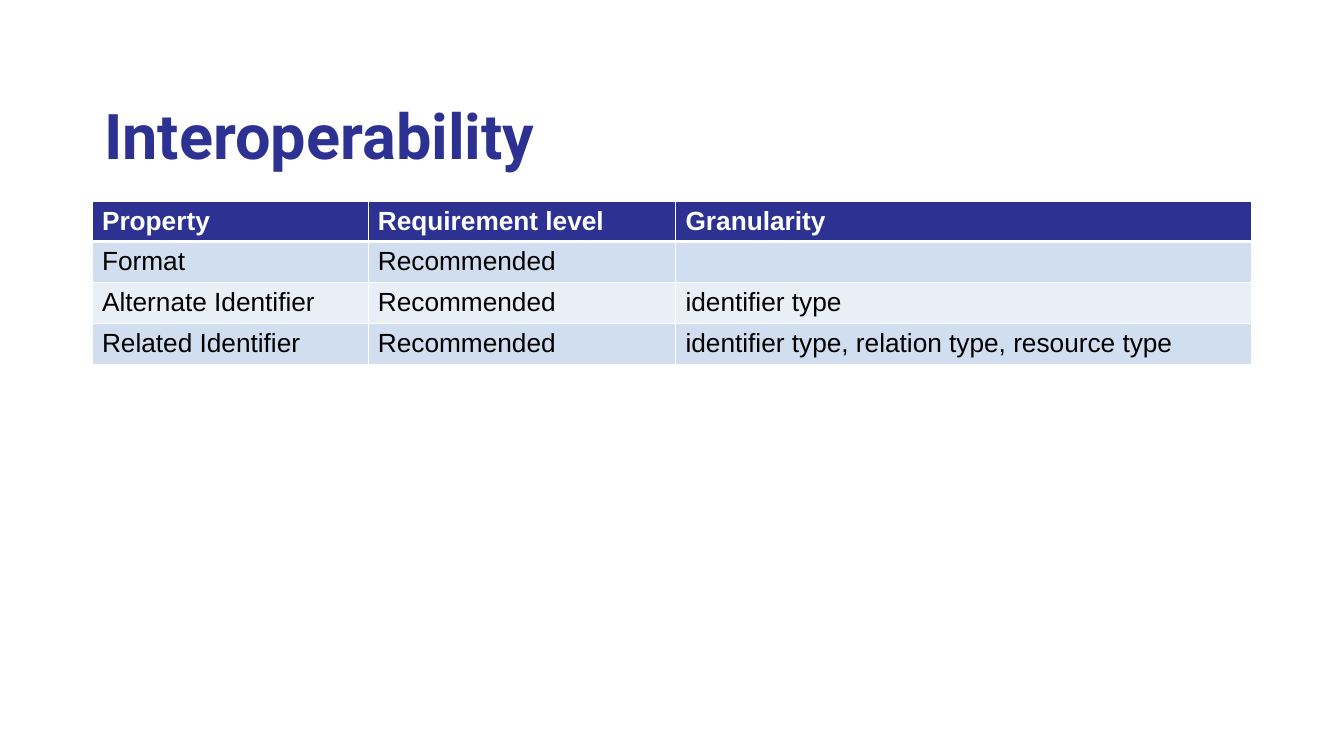
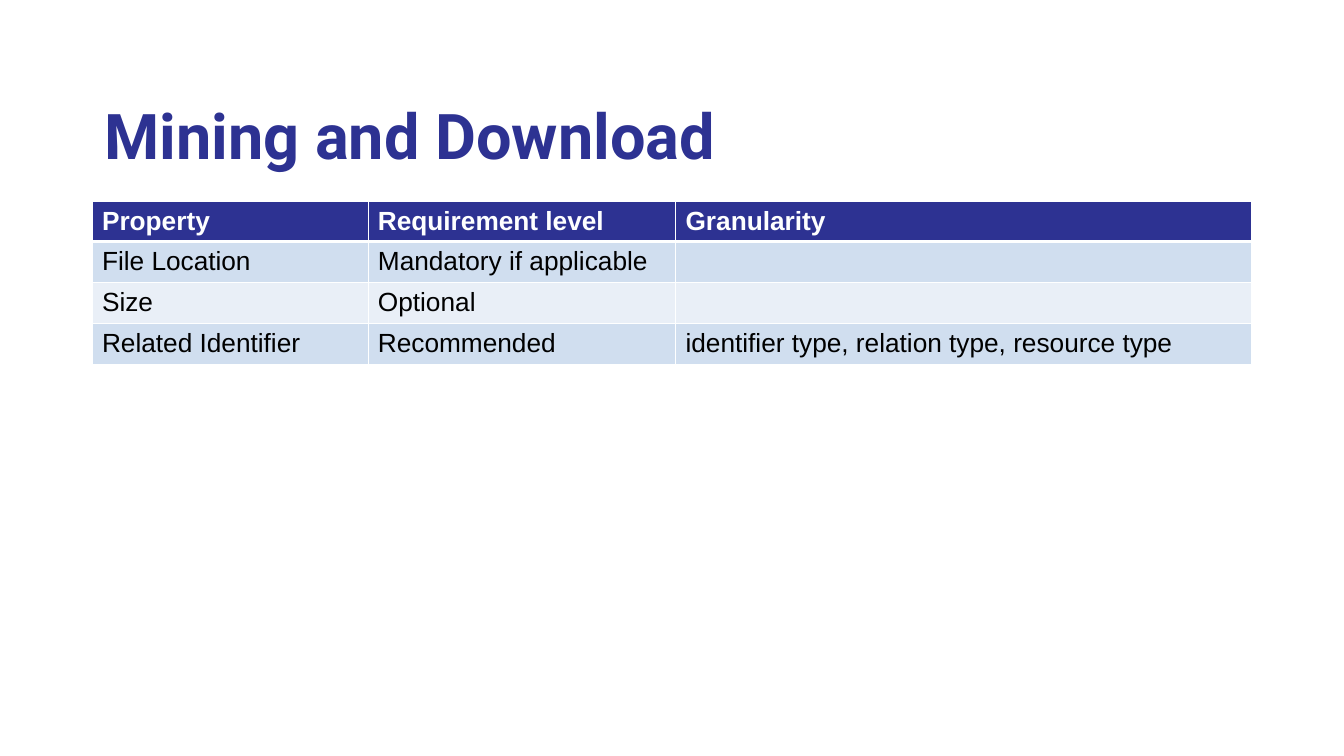
"""Build two slides of metadata property tables, Interoperability and Mining and Download."""
from lxml import etree
from pptx import Presentation
from pptx.dml.color import RGBColor
from pptx.enum.text import MSO_ANCHOR, MSO_AUTO_SIZE, PP_ALIGN
from pptx.oxml.ns import qn
from pptx.util import Inches, Pt

LEFT = PP_ALIGN.LEFT
MIDDLE = MSO_ANCHOR.MIDDLE
NO_AUTOFIT = MSO_AUTO_SIZE.NONE

INDIGO = RGBColor(0x2D, 0x32, 0x92)
WHITE = RGBColor(0xFE, 0xFF, 0xFF)
BLACK = RGBColor(0x00, 0x00, 0x00)
BAND_DARK = RGBColor(0xD0, 0xDE, 0xEF)
BAND_LIGHT = RGBColor(0xE9, 0xEF, 0xF7)

TITLE_ONLY = 5
COLUMN_WIDTHS = [3.65, 4.07, 7.62]
ROW_HEIGHT = 0.54
HEADER = ("Property", "Requirement level", "Granularity")
RELATED = ("Related Identifier", "Recommended", "identifier type, relation type, resource type")
SECTIONS = [
    ("Interoperability", [
        ("Format", "Recommended", ""),
        ("Alternate Identifier", "Recommended", "identifier type"),
        RELATED,
    ]),
    ("Mining and Download", [
        ("File Location", "Mandatory if applicable", ""),
        ("Size", "Optional", ""),
        RELATED,
    ]),
]


def style_font(paragraph, name, size, color, bold):
    font = paragraph.font
    font.name, font.size, font.bold = name, Pt(size), bold
    font.color.rgb = color


def set_borders(cell, top, bottom):
    properties = cell._tc.get_or_add_tcPr()
    sides = [("a:lnL", 1), ("a:lnR", 1), ("a:lnT", top), ("a:lnB", bottom)]
    for position, (side, width) in enumerate(sides):
        line = etree.Element(qn(side), w=str(Pt(width)))
        fill = etree.SubElement(line, qn("a:solidFill"))
        etree.SubElement(fill, qn("a:srgbClr"), val=str(WHITE))
        properties.insert(position, line)


prs = Presentation()
prs.slide_width, prs.slide_height = Inches(17.78), Inches(10)

for heading, properties in SECTIONS:
    slide = prs.slides.add_slide(prs.slide_layouts[TITLE_ONLY])
    title = slide.shapes.title
    title.left, title.top = Inches(1.38), Inches(0.66)
    title.width, title.height = Inches(26.31), Inches(2.23)
    title_frame = title.text_frame
    title_frame.text = heading
    title_frame.auto_size = NO_AUTOFIT
    title_frame.vertical_anchor = MIDDLE
    title_frame.margin_left = title_frame.margin_right = 0
    title_frame.margin_top = title_frame.margin_bottom = 0
    title_frame.paragraphs[0].alignment = LEFT
    style_font(title_frame.paragraphs[0], "Roboto", 60, INDIGO, True)

    rows = [HEADER, *properties]
    table = slide.shapes.add_table(
        len(rows), len(HEADER), Inches(1.22), Inches(2.66),
        Inches(sum(COLUMN_WIDTHS)), Inches(ROW_HEIGHT * len(rows))).table
    table.horz_banding = False
    for column, width in zip(table.columns, COLUMN_WIDTHS):
        column.width = Inches(width)

    for r, row in enumerate(rows):
        table.rows[r].height = Inches(ROW_HEIGHT)
        is_header = r == 0
        band = INDIGO if is_header else BAND_DARK if r % 2 else BAND_LIGHT
        for c, entry in enumerate(row):
            cell = table.cell(r, c)
            cell.text = entry
            cell.margin_left = cell.margin_right = Inches(0.13)
            cell.margin_top = cell.margin_bottom = Inches(0.07)
            cell.fill.solid()
            cell.fill.fore_color.rgb = band
            set_borders(cell, top=3 if r == 1 else 1, bottom=3 if is_header else 1)
            style_font(cell.text_frame.paragraphs[0], "Arial", 25,
                       WHITE if is_header else BLACK, is_header)

prs.save("out.pptx")
